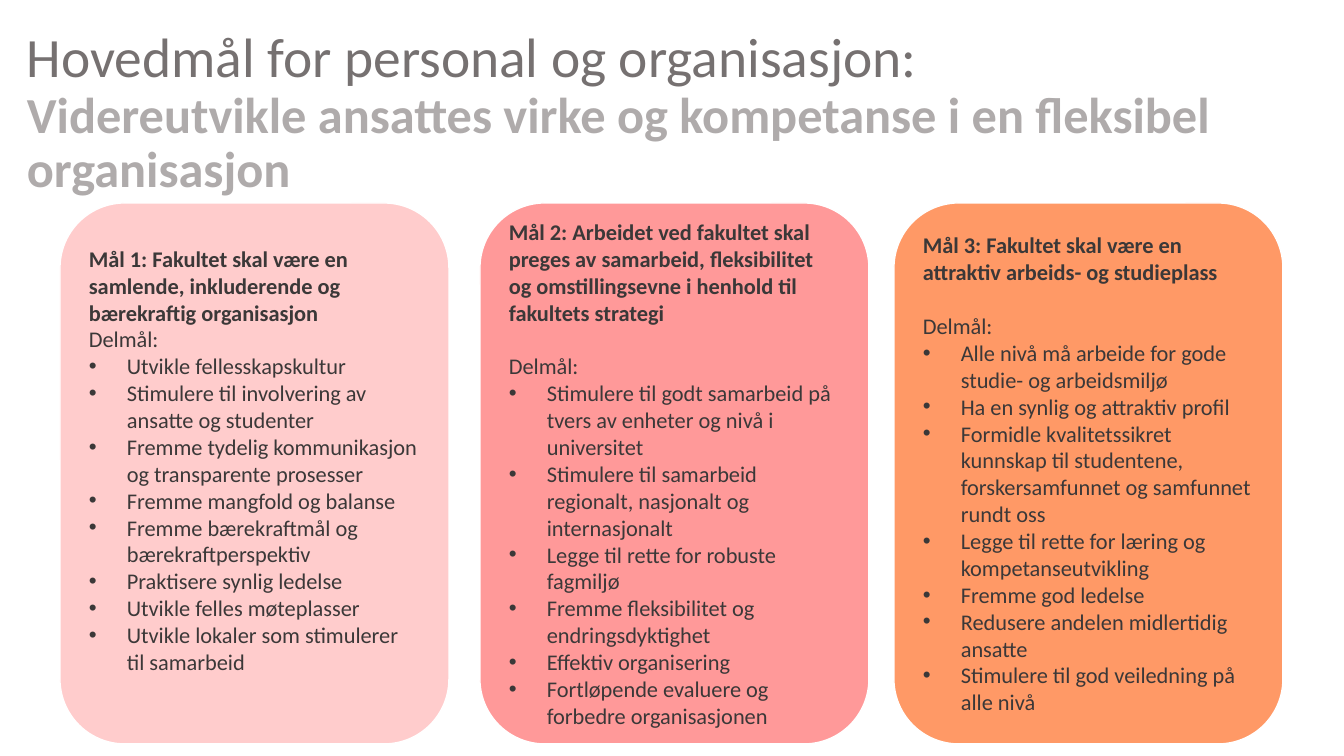
from pptx import Presentation
from pptx.dml.color import RGBColor
from pptx.enum.shapes import MSO_SHAPE
from pptx.enum.text import MSO_ANCHOR, PP_ALIGN
from pptx.oxml import parse_xml
from pptx.oxml.ns import nsdecls
from pptx.util import Pt

ROUNDED = MSO_SHAPE.ROUNDED_RECTANGLE
TOP, MIDDLE = MSO_ANCHOR.TOP, MSO_ANCHOR.MIDDLE
LEFT = PP_ALIGN.LEFT

PX = 914400 / 100.8
THEME = {
    "font": "Calibri",
    "heading": "767171", "subheading": "AFABAB", "body": "3B3838",
    "outline": "FFFFFF",
    "pink": "FFCCCC", "rose": "FF9999", "orange": "FF9966",
    "heading_size": 39.6, "subheading_size": 36, "body_size": 16,
}
BULLET_INDENT = 38
BLANK_LINE = 27  # height of one line of body text


def px(length):
    return round(length * PX)


def add_text(frame, text, size="body_size", color="body", bold=False,
             bullet=False, before=0, spacing=1.0):
    """Add one formatted paragraph, using the frame's first one if it is empty."""
    paragraph = frame.paragraphs[0]
    if paragraph.runs:
        paragraph = frame.add_paragraph()
    paragraph.alignment = LEFT
    paragraph.line_spacing = spacing
    paragraph.space_before = px(before)
    run = paragraph.add_run()
    run.text = text
    run.font.name = THEME["font"]
    run.font.size = Pt(THEME[size])
    run.font.bold = bold
    run.font.color.rgb = RGBColor.from_string(THEME[color])
    if bullet:
        properties = paragraph._p.get_or_add_pPr()
        properties.set("marL", str(px(BULLET_INDENT)))
        properties.set("indent", str(-px(BULLET_INDENT)))
        properties.append(parse_xml(f'<a:buFont {nsdecls("a")} typeface="Arial"/>'))
        properties.append(parse_xml(f'<a:buChar {nsdecls("a")} char="•"/>'))


presentation = Presentation()
presentation.slide_width, presentation.slide_height = px(1344), px(756)
slide = presentation.slides.add_slide(presentation.slide_layouts[6])

# Title
title = slide.shapes.add_textbox(px(17), px(25), px(1221), px(176)).text_frame
title.word_wrap = True
title.vertical_anchor = TOP
add_text(title, "Hovedmål for personal og organisasjon:",
         size="heading_size", color="heading", spacing=0.9)
add_text(title, "Videreutvikle ansattes virke og kompetanse i en fleksibel organisasjon",
         size="subheading_size", color="subheading", bold=True, spacing=0.9)

# Goal cards: left, fill, gap above the subgoals, gap below the text, goal, subgoals
GOALS = [
    (60, "pink", 0, BLANK_LINE,
     "Mål 1: Fakultet skal være en samlende, inkluderende og bærekraftig organisasjon",
     ["Utvikle fellesskapskultur",
      "Stimulere til involvering av ansatte og studenter",
      "Fremme tydelig kommunikasjon og transparente prosesser",
      "Fremme mangfold og balanse",
      "Fremme bærekraftmål og bærekraftperspektiv",
      "Praktisere synlig ledelse",
      "Utvikle felles møteplasser",
      "Utvikle lokaler som stimulerer til samarbeid"]),
    (480, "rose", BLANK_LINE, 0,
     "Mål 2: Arbeidet ved fakultet skal preges av samarbeid, fleksibilitet "
     "og omstillingsevne i henhold til fakultets strategi",
     ["Stimulere til godt samarbeid på tvers av enheter og nivå i universitet",
      "Stimulere til samarbeid regionalt, nasjonalt og internasjonalt",
      "Legge til rette for robuste fagmiljø",
      "Fremme fleksibilitet og endringsdyktighet",
      "Effektiv organisering",
      "Fortløpende evaluere og forbedre organisasjonen"]),
    (894, "orange", BLANK_LINE, 0,
     "Mål 3: Fakultet skal være en attraktiv arbeids- og studieplass",
     ["Alle nivå må arbeide for gode studie- og arbeidsmiljø",
      "Ha en synlig og attraktiv profil",
      "Formidle kvalitetssikret kunnskap til studentene, forskersamfunnet "
      "og samfunnet rundt oss",
      "Legge til rette for læring og kompetanseutvikling",
      "Fremme god ledelse",
      "Redusere andelen midlertidig ansatte",
      "Stimulere til god veiledning på alle nivå"]),
]

for left, fill, gap_above, gap_below, goal, subgoals in GOALS:
    card = slide.shapes.add_shape(ROUNDED, px(left), px(203), px(389), px(541))
    card.shadow.inherit = False
    card.fill.solid()
    card.fill.fore_color.rgb = RGBColor.from_string(THEME[fill])
    card.line.color.rgb = RGBColor.from_string(THEME["outline"])
    card.line.width = Pt(1)
    frame = card.text_frame
    frame.word_wrap = True
    frame.vertical_anchor = MIDDLE
    frame.margin_bottom = px(5 + gap_below)
    add_text(frame, goal, bold=True)
    add_text(frame, "Delmål:", before=gap_above)
    for subgoal in subgoals:
        add_text(frame, subgoal, bullet=True)

presentation.save("out.pptx")
